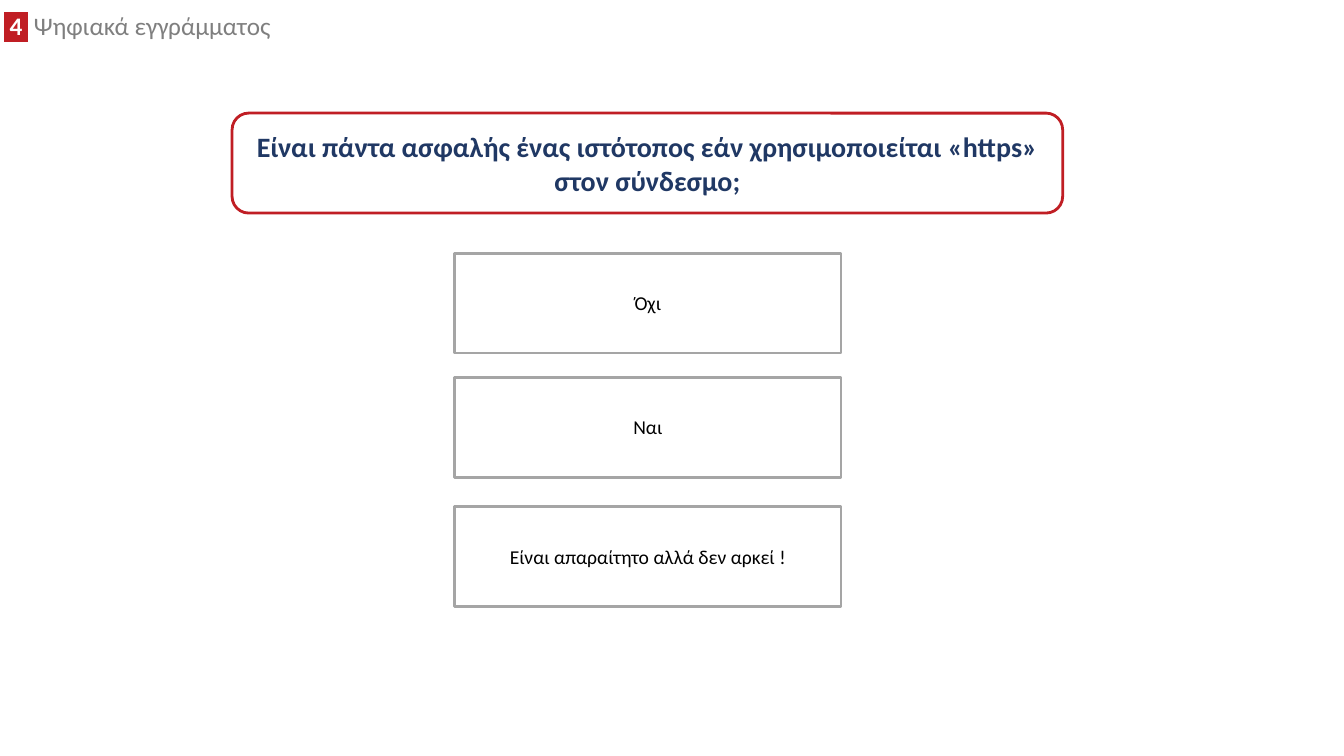
"""Build a quiz slide with a header, a question and three answer boxes."""
from lxml import etree
from pptx import Presentation
from pptx.dml.color import RGBColor
from pptx.enum.shapes import MSO_SHAPE
from pptx.enum.text import MSO_ANCHOR, MSO_AUTO_SIZE, PP_ALIGN
from pptx.oxml.ns import qn
from pptx.util import Pt

RED = RGBColor(0xC0, 0x1E, 0x24)
NAVY = RGBColor(0x20, 0x38, 0x64)
GREY = RGBColor(0x7F, 0x7F, 0x7F)
SILVER = RGBColor(0xA5, 0xA5, 0xA5)
WHITE = RGBColor(0xFF, 0xFF, 0xFF)
BLACK = RGBColor(0, 0, 0)
ROUND, RECT = MSO_SHAPE.ROUNDED_RECTANGLE, MSO_SHAPE.RECTANGLE
TOP, MIDDLE = MSO_ANCHOR.TOP, MSO_ANCHOR.MIDDLE
LEFT, CENTER = PP_ALIGN.LEFT, PP_ALIGN.CENTER
NO_FIT = MSO_AUTO_SIZE.NONE


def write(par, text, size=18, color=BLACK, bold=False, align=CENTER):
    par.alignment = align
    run = par.add_run()
    run.text = text
    run.font.name = "Calibri"
    run.font.size = Pt(size)
    run.font.bold = bold
    run.font.color.rgb = color
    return run


deck = Presentation()
deck.slide_width, deck.slide_height = Pt(960), Pt(540)
slide = deck.slides.add_slide(deck.slide_layouts[5])

title = slide.shapes.title
title.left, title.top = Pt(-4.3), Pt(7.9)
title.width, title.height = Pt(685.4), Pt(25.2)
frame = title.text_frame
frame.auto_size = NO_FIT
frame.word_wrap = True
frame.vertical_anchor = TOP
head = frame.paragraphs[0]
head.line_spacing = 0.8
badge = write(head, " 4 ", color=WHITE, bold=True, align=LEFT)
write(head, " Ψηφιακά εγγράμματος", color=GREY, align=LEFT)
mark = etree.Element(qn("a:highlight"))
etree.SubElement(mark, qn("a:srgbClr"), val=str(RED))
badge.font._element.find(qn("a:solidFill")).addnext(mark)

ask = "Είναι πάντα ασφαλής ένας ιστότοπος εάν χρησιμοποιείται «https» στον σύνδεσμο;"
ask_style = {"size": 20, "color": NAVY, "bold": True}
reply_style = {"size": 14}
boxes = [
    (ROUND, 165.8, 80.8, 593.3, RED, ask, ask_style),
    (RECT, 324.9, 180.8, 275.8, SILVER, "Όχι", reply_style),
    (RECT, 324.9, 269.4, 275.8, SILVER, "Ναι", reply_style),
    (RECT, 324.9, 361.6, 275.8, SILVER, "Είναι απαραίτητο αλλά δεν αρκεί !", reply_style),
]
for kind, left, top, width, edge, text, style in boxes:
    box = slide.shapes.add_shape(kind, Pt(left), Pt(top), Pt(width), Pt(71.4))
    box.shadow.inherit = False
    box.fill.solid()
    box.fill.fore_color.rgb = WHITE
    box.line.color.rgb = edge
    box.line.width = Pt(2)
    box.text_frame.word_wrap = True
    box.text_frame.vertical_anchor = MIDDLE
    write(box.text_frame.paragraphs[0], text, **style)

deck.save("out.pptx")
